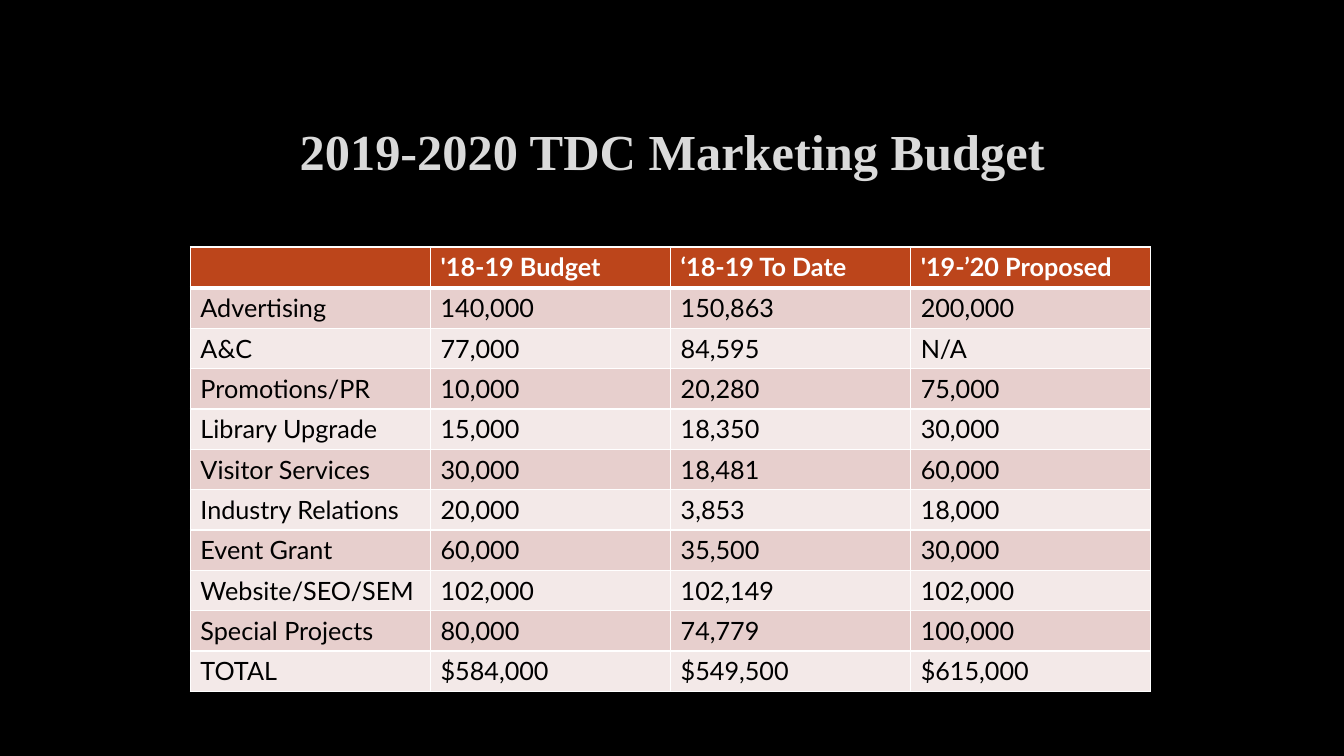
"""Build the 2019-2020 TDC marketing budget slide."""
from lxml import etree
from pptx import Presentation
from pptx.dml.color import RGBColor
from pptx.enum import text
from pptx.oxml import ns
from pptx.util import Pt

COLORS = {
    "background": "000000", "title": "DADADA", "outline": "404040",
    "header": "BC451B", "odd": "E7CFCD", "even": "F3E9E8",
    "light": "FFFFFF", "dark": "000000",
}
BUDGET = [
    ["", "'18-19 Budget", "‘18-19 To Date", "'19-’20 Proposed"],
    ["Advertising", "140,000", "150,863", "200,000"],
    ["A&C", "77,000", "84,595", "N/A"],
    ["Promotions/PR", "10,000", "20,280", "75,000"],
    ["Library Upgrade", "15,000", "18,350", "30,000"],
    ["Visitor Services", "30,000", "18,481", "60,000"],
    ["Industry Relations", "20,000", "3,853", "18,000"],
    ["Event Grant", "60,000", "35,500", "30,000"],
    ["Website/SEO/SEM", "102,000", "102,149", "102,000"],
    ["Special Projects", "80,000", "74,779", "100,000"],
    ["TOTAL", "$584,000", "$549,500", "$615,000"],
]
COLUMN_WIDTH = 171.5
ROW_HEIGHT = 28.8


def line_element(tag, width, color, opacity=100):
    """Return a solid line element for a cell border or a text outline."""
    line = etree.Element(ns.qn(tag), w=str(Pt(width)))
    fill = etree.SubElement(line, ns.qn("a:solidFill"))
    shade = etree.SubElement(fill, ns.qn("a:srgbClr"), val=COLORS[color])
    if opacity < 100:
        etree.SubElement(shade, ns.qn("a:alpha"), val=str(opacity * 1000))
    etree.SubElement(line, ns.qn("a:prstDash"), val="solid")
    return line


def style_font(font, name, size, color, bold):
    """Set the typeface, size, colour and weight of a font."""
    font.name = name
    font.size = Pt(size)
    font.bold = bold
    font.color.rgb = RGBColor.from_string(COLORS[color])


deck = Presentation()
deck.slide_width, deck.slide_height = Pt(960), Pt(540)
page = deck.slides.add_slide(deck.slide_layouts[5])
page.background.fill.solid()
page.background.fill.fore_color.rgb = RGBColor.from_string(COLORS["background"])

title = page.shapes.title
title.left, title.top, title.width, title.height = Pt(206), Pt(79), Pt(548.5), Pt(57)
frame = title.text_frame
frame.text = "2019-2020 TDC Marketing Budget"
frame.word_wrap = True
frame.auto_size = text.MSO_AUTO_SIZE.NONE
frame.vertical_anchor = text.MSO_ANCHOR.MIDDLE
para = frame.paragraphs[0]
para.alignment = text.PP_ALIGN.CENTER
span = para.runs[0]
style_font(span.font, "Times New Roman", 36, "title", True)
span.font._element.insert(0, line_element("a:ln", 0.75, "outline", 10))

row_count, column_count = len(BUDGET), len(BUDGET[0])
table = page.shapes.add_table(
    row_count, column_count, Pt(136), Pt(176.4),
    Pt(COLUMN_WIDTH * column_count), Pt(ROW_HEIGHT * row_count)).table
for column in table.columns:
    column.width = Pt(COLUMN_WIDTH)

for row_index, values in enumerate(BUDGET):
    table.rows[row_index].height = Pt(ROW_HEIGHT)
    is_header = row_index == 0
    band = "header" if is_header else ("even", "odd")[row_index % 2]
    borders = {"a:lnL": 1, "a:lnR": 1,
               "a:lnT": 3 if row_index == 1 else 1,
               "a:lnB": 3 if is_header else 1}
    for column_index, value in enumerate(values):
        cell = table.cell(row_index, column_index)
        cell.fill.solid()
        cell.fill.fore_color.rgb = RGBColor.from_string(COLORS[band])
        properties = cell._tc.get_or_add_tcPr()
        for position, (tag, width) in enumerate(borders.items()):
            properties.insert(position, line_element(tag, width, "light"))
        cell.text_frame.text = value
        for span in cell.text_frame.paragraphs[0].runs:
            style_font(span.font, "Lato", 18, "light" if is_header else "dark", is_header)

deck.save("out.pptx")
